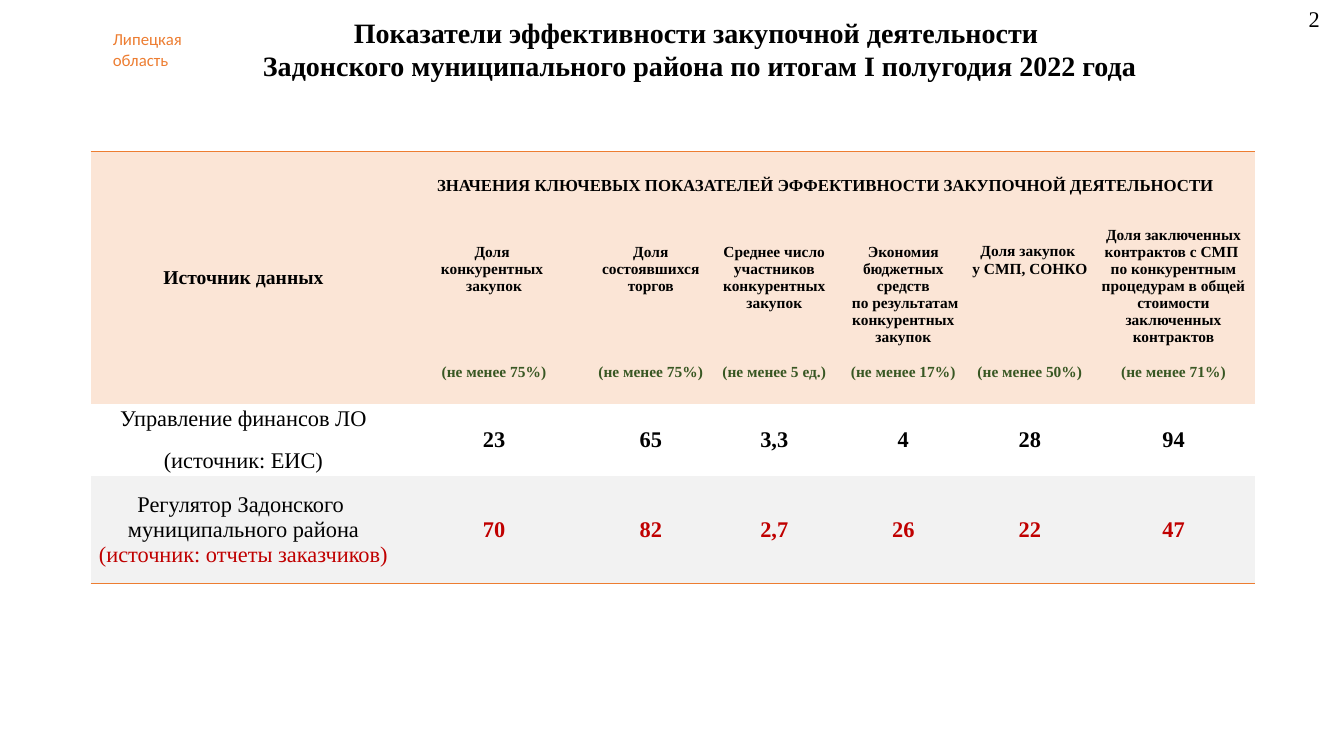
from lxml.etree import SubElement
from pptx import Presentation
from pptx.dml.color import RGBColor
from pptx.enum.text import MSO_ANCHOR, PP_ALIGN
from pptx.oxml import parse_xml
from pptx.oxml.ns import nsdecls, qn
from pptx.util import Inches, Pt

BLACK = RGBColor(0, 0, 0)
ORANGE = RGBColor(0xED, 0x7D, 0x31)
PEACH = RGBColor(0xFB, 0xE5, 0xD6)
GREY = RGBColor(0xF2, 0xF2, 0xF2)
GREEN = RGBColor(0x38, 0x57, 0x23)
RED = RGBColor(0xC0, 0, 0)
SERIF = "Times New Roman"
NO_STYLE = "{2D5ABB26-0587-4C30-8999-92F81FD0307C}"

TITLE = ["Показатели эффективности закупочной деятельности ",
         "Задонского муниципального района по итогам I полугодия 2022 года"]
REGION = ["Липецкая", "область"]
SOURCE = "Источник данных"
HEADING = "ЗНАЧЕНИЯ КЛЮЧЕВЫХ ПОКАЗАТЕЛЕЙ ЭФФЕКТИВНОСТИ ЗАКУПОЧНОЙ ДЕЯТЕЛЬНОСТИ"
# name of the measure, lines left free below it, target
MEASURES = [
    (["Доля ", "конкурентных ", "закупок"], 4, "(не менее 75%)"),
    (["Доля состоявшихся торгов"], 4, "(не менее 75%)"),
    (["Среднее число участников конкурентных закупок"], 3, "(не менее 5 ед.)"),
    (["Экономия бюджетных средств\v по результатам конкурентных закупок"], 1,
     "(не менее 17%)"),
    (["Доля закупок \vу СМП, СОНКО"], 5, "(не менее 50%)"),
    (["Доля заключенных контрактов с СМП ",
      "по конкурентным процедурам в общей стоимости заключенных контрактов"], 1,
     "(не менее 71%)"),
]
FINANCE = ["Управление финансов ЛО", "(источник: ЕИС)"]
OFFICE = ["Регулятор Задонского ", "муниципального района", "(источник: отчеты заказчиков)"]
VALUES = [(["23", "65", "3,3", "4", "28", "94"], BLACK),
          (["70", "82", "2,7", "26", "22", "47"], RED)]
COLS = [3.03, 1.94, 1.17, 1.28, 1.28, 1.23, 1.62]
ROWS = [0.68, 1.83, 0.71, 1.07]
LINE = 12.3  # height of a line of 11 pt text, in points


def write(frame, lines, size, color=BLACK, bold=False, align=PP_ALIGN.CENTER, face=SERIF):
    frame.word_wrap = True
    frame.text = "\n".join(lines)
    for para in frame.paragraphs:
        para.alignment = align
        font = para.font
        font.name, font.size, font.bold = face, Pt(size), bold
        font.color.rgb = color
    return frame.paragraphs


def add_label(slide, box, lines, size, color, face):
    label = slide.shapes.add_textbox(*map(Inches, box))
    write(label.text_frame, lines, size, color, align=PP_ALIGN.LEFT, face=face)


def set_edge(cell, tag):
    edge = parse_xml(f'<a:{tag} {nsdecls("a")} w="12700"/>')
    fill = SubElement(edge, qn("a:solidFill"))
    SubElement(fill, qn("a:srgbClr")).set("val", str(ORANGE))
    cell._tc.get_or_add_tcPr().insert(0, edge)


def add_table(slide):
    frame = slide.shapes.add_table(len(ROWS), len(COLS), Inches(0.9), Inches(1.5),
                                   Inches(sum(COLS)), Inches(sum(ROWS)))
    table = frame.table
    table.first_row = table.horz_banding = False
    table._tbl.tblPr.find(qn("a:tableStyleId")).text = NO_STYLE
    for col, width in zip(table.columns, COLS):
        col.width = Inches(width)
    for row, height, fill in zip(table.rows, ROWS, [PEACH, PEACH, None, GREY]):
        row.height = Inches(height)
        for cell in row.cells:
            cell.vertical_anchor = MSO_ANCHOR.MIDDLE
            cell.margin_left = cell.margin_right = 0
            cell.margin_top = cell.margin_bottom = 0
            if fill is None:
                cell.fill.background()
            else:
                cell.fill.solid()
                cell.fill.fore_color.rgb = fill
    for col in range(len(COLS)):
        set_edge(table.cell(0, col), "lnT")
        set_edge(table.cell(len(ROWS) - 1, col), "lnB")
    table.cell(0, 0).merge(table.cell(1, 0))
    table.cell(0, 1).merge(table.cell(0, len(COLS) - 1))
    return table


def fill_table(table):
    write(table.cell(0, 0).text_frame, [SOURCE], 14, bold=True)
    write(table.cell(0, 1).text_frame, [HEADING], 12, bold=True)
    for col, (name, gap, target) in enumerate(MEASURES, 1):
        goal = write(table.cell(1, col).text_frame, name + [target], 11, bold=True)[-1]
        goal.font.color.rgb = GREEN
        goal.space_before = Pt(gap * LINE)
    table.cell(1, len(MEASURES)).margin_bottom = Inches(0.17)

    first, last = write(table.cell(2, 0).text_frame, FINANCE, 16)
    first.space_after = last.space_before = Pt(6)
    write(table.cell(3, 0).text_frame, OFFICE, 16)[-1].font.color.rgb = RED
    for row, (values, color) in enumerate(VALUES, 2):
        for col, value in enumerate(values, 1):
            write(table.cell(row, col).text_frame, [value], 16, color, bold=True)


def main():
    deck = Presentation()
    deck.slide_width, deck.slide_height = Inches(13.33), Inches(7.5)
    slide = deck.slides.add_slide(deck.slide_layouts[5])
    title = slide.shapes.title
    title.left, title.top, title.width, title.height = map(Inches, (1.77, 0.1, 10.34, 0.77))
    title.text_frame.vertical_anchor = MSO_ANCHOR.TOP
    write(title.text_frame, TITLE, 20, bold=True)
    add_label(slide, (1.02, 0.24, 0.91, 0.5), REGION, 12, ORANGE, "Calibri")
    fill_table(add_table(slide))
    add_label(slide, (12.88, 0, 0.45, 0.37), ["2"], 16, BLACK, SERIF)
    deck.save("out.pptx")


if __name__ == "__main__":
    main()
